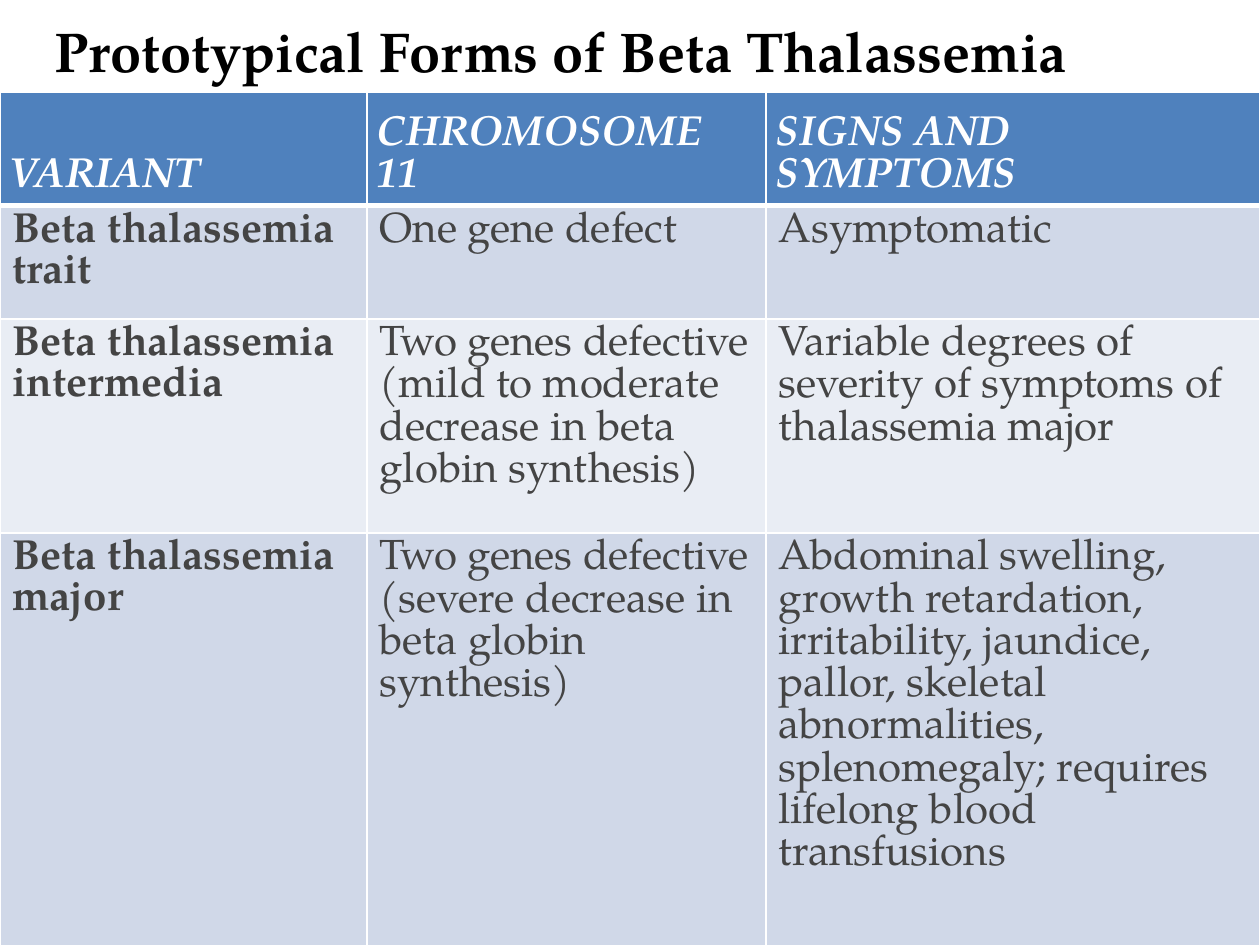
from lxml.etree import SubElement
from pptx import Presentation
from pptx.dml.color import RGBColor
from pptx.enum.text import MSO_ANCHOR, MSO_AUTO_SIZE
from pptx.oxml.ns import qn
from pptx.util import Pt

PX = 914400 // 126
WHITE = RGBColor(0xFF, 0xFF, 0xFF)
BLACK = RGBColor(0, 0, 0)
TEXT_GREY = RGBColor(0x44, 0x44, 0x44)
HEADER_BLUE = RGBColor(0x4F, 0x81, 0xBD)
BAND_DARK = RGBColor(0xD0, 0xD8, 0xE8)
BAND_LIGHT = RGBColor(0xE9, 0xED, 0xF4)

TITLE_FONT = {"name": "TeX Gyre Pagella", "size": Pt(32), "bold": True}
CELL_FONT = {"name": "TeX Gyre Pagella", "size": Pt(24)}
HEADER_FORMAT = {"vertical_anchor": MSO_ANCHOR.BOTTOM, "margin_left": 10 * PX}
BODY_FORMAT = {"vertical_anchor": MSO_ANCHOR.TOP}

COLUMN_WIDTHS = [367, 399, 494]
ROW_HEIGHTS = [113, 113, 214, 413]
HEADERS = ["VARIANT", "CHROMOSOME 11", "SIGNS AND SYMPTOMS"]
VARIANTS = [
    ["Beta thalassemia trait", "One gene defect", "Asymptomatic"],
    ["Beta thalassemia intermedia",
     "Two genes defective (mild to moderate decrease in beta globin synthesis)",
     "Variable degrees of severity of symptoms of thalassemia major"],
    ["Beta thalassemia major",
     "Two genes defective (severe decrease in beta globin synthesis)",
     "Abdominal swelling, growth retardation, irritability, jaundice, pallor, "
     "skeletal abnormalities, splenomegaly; requires lifelong blood transfusions"],
]


def apply_format(target, values):
    for name, value in values.items():
        setattr(target, name, value)


def write_text(paragraph, text, color, font_values):
    run = paragraph.add_run()
    run.text = text
    apply_format(run.font, font_values)
    run.font.color.rgb = color


def add_title(slide, text):
    title = slide.shapes.add_textbox(42 * PX, 10 * PX, 1166 * PX, 81 * PX)
    frame = title.text_frame
    apply_format(frame, {"word_wrap": True, "auto_size": MSO_AUTO_SIZE.SHAPE_TO_FIT_TEXT})
    write_text(frame.paragraphs[0], text, BLACK, TITLE_FONT)


def set_borders(cell, widths):
    properties = cell._tc.get_or_add_tcPr()
    for position, (side, width) in enumerate(widths.items()):
        line = properties.makeelement(qn(f"a:{side}"), {"w": str(Pt(width))})
        fill = SubElement(line, qn("a:solidFill"))
        SubElement(fill, qn("a:srgbClr"), val=str(WHITE))
        properties.insert(position, line)


def fill_cell(cell, text, background, color, cell_values, font_values):
    apply_format(cell, cell_values)
    cell.fill.solid()
    cell.fill.fore_color.rgb = background
    write_text(cell.text_frame.paragraphs[0], text, color, CELL_FONT | font_values)


def add_variant_table(slide):
    rows = [HEADERS, *VARIANTS]
    table = slide.shapes.add_table(
        len(rows), len(HEADERS), 0, 92 * PX,
        sum(COLUMN_WIDTHS) * PX, sum(ROW_HEIGHTS) * PX).table
    for column, width in zip(table.columns, COLUMN_WIDTHS):
        column.width = width * PX
    for row, height in zip(table.rows, ROW_HEIGHTS):
        row.height = height * PX
    for row_index, texts in enumerate(rows):
        is_header = row_index == 0
        band = BAND_DARK if row_index % 2 else BAND_LIGHT
        for column_index, text in enumerate(texts):
            cell = table.cell(row_index, column_index)
            if is_header:
                fill_cell(cell, text, HEADER_BLUE, WHITE, HEADER_FORMAT,
                          {"bold": True, "italic": True})
            else:
                fill_cell(cell, text, band, TEXT_GREY, BODY_FORMAT,
                          {"bold": column_index == 0, "italic": False})
            set_borders(cell, {"lnL": 1, "lnR": 1, "lnT": 1,
                               "lnB": 3 if is_header else 1})


def main():
    presentation = Presentation()
    presentation.slide_width = 1260 * PX
    presentation.slide_height = 945 * PX
    slide = presentation.slides.add_slide(presentation.slide_layouts[6])
    add_title(slide, "Prototypical Forms of Beta Thalassemia")
    add_variant_table(slide)
    presentation.save("out.pptx")


if __name__ == "__main__":
    main()
